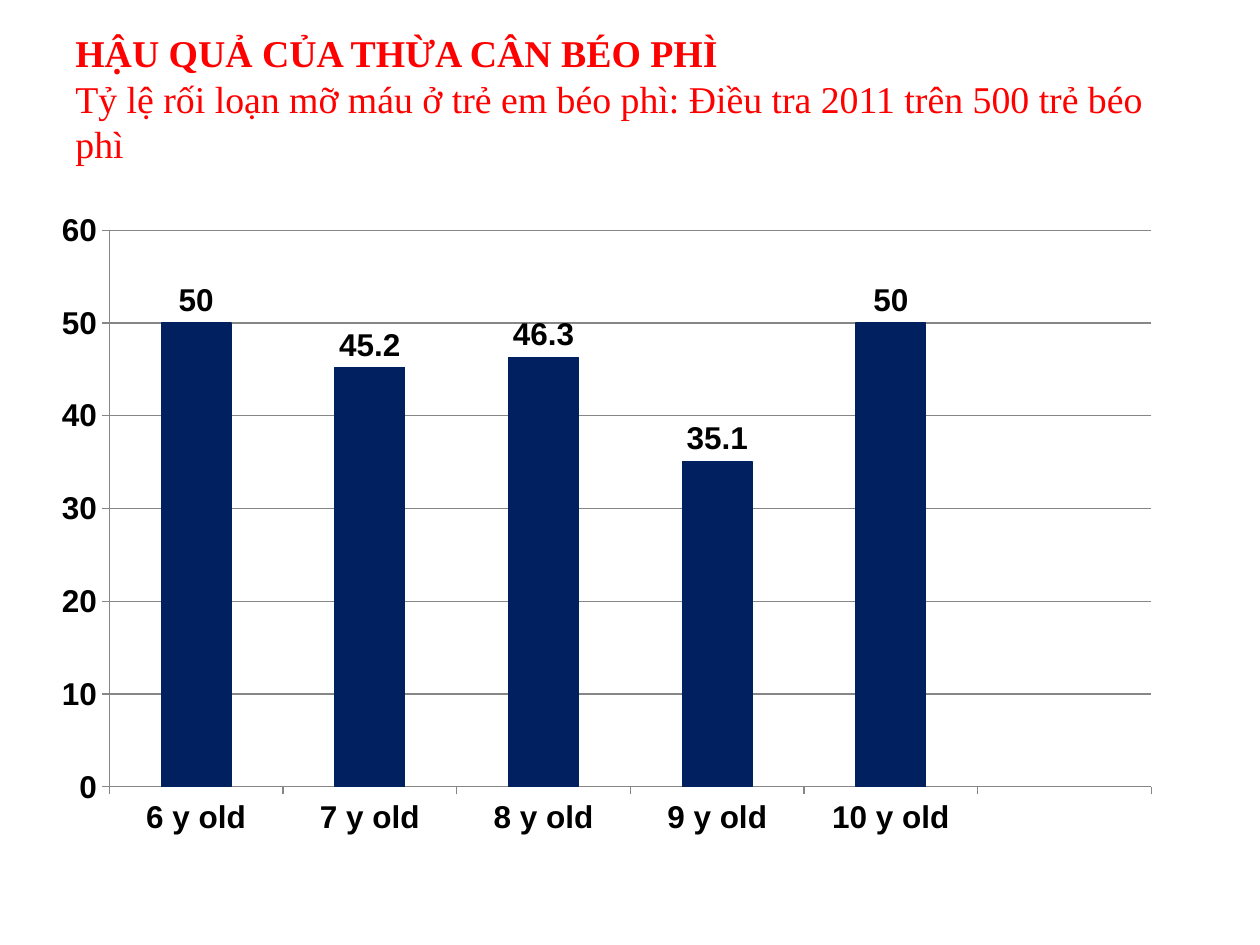
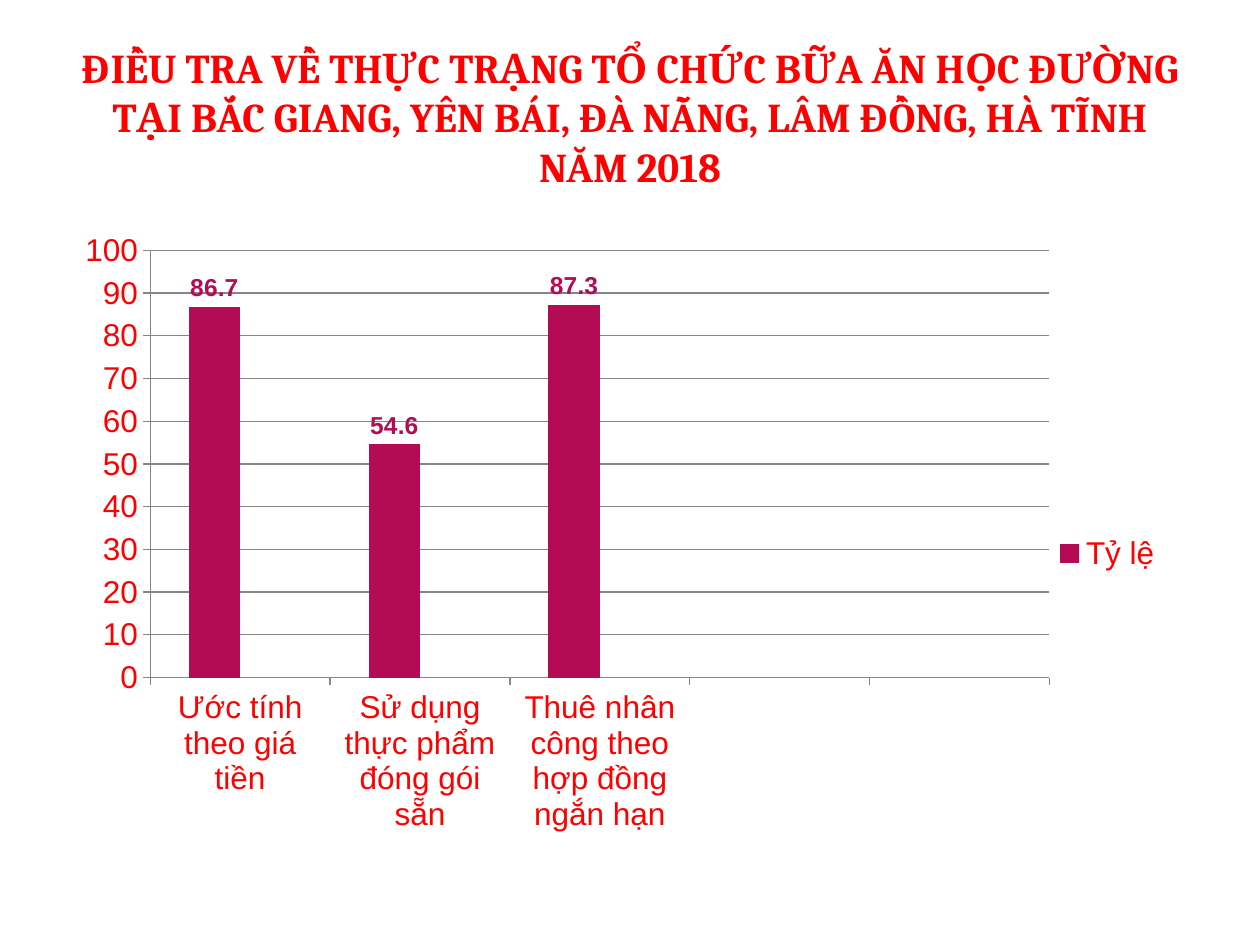
import pptx
import pptx.chart.data
import pptx.dml.color
import pptx.enum.chart
import pptx.enum.text
import pptx.util
import lxml.etree
from pptx.oxml.ns import qn

COLS, ROWS, CELL = 100, 75, 0.1
RED, BLACK, GREY, NAVY, PINK = "FF0000", "000000", "868686", "002060", "B40C54"
MID = pptx.enum.text.MSO_ANCHOR.MIDDLE
ALIGN = pptx.enum.text.PP_ALIGN
KIND = pptx.enum.chart.XL_CHART_TYPE.COLUMN_CLUSTERED


def tint(code):
    """Turn a hex string into a colour."""
    return pptx.dml.color.RGBColor.from_string(code)


def cells(count):
    """Turn a count of grid cells into a length."""
    return pptx.util.Inches(count * CELL)


def style(font, size, color, bold=False, name="Arial"):
    """Set the look of a font."""
    font.name, font.size, font.bold = name, pptx.util.Pt(size), bold
    font.color.rgb = tint(color)


def title(slide, box, runs, size, name, align, base=0.5):
    """Write a red title, one line of text for each run."""
    text = slide.shapes.add_textbox(*map(cells, box)).text_frame
    text.word_wrap, text.vertical_anchor = True, MID
    text.margin_bottom = cells(base)
    para = text.paragraphs[0]
    para.alignment = align
    for spot, (words, bold) in enumerate(runs):
        if spot:
            para.add_line_break()
        run = para.add_run()
        run.text = words
        style(run.font, size, RED, bold, name)


def layout(parent, spot, parts, inner=False):
    """Fix a chart part at percents of the chart's size."""
    for old in parent.findall(qn("c:layout")):
        parent.remove(old)
    outer = lxml.etree.Element(qn("c:layout"))
    manual = lxml.etree.SubElement(outer, qn("c:manualLayout"))
    pairs = [("layoutTarget", "inner")] if inner else []
    pairs += [("xMode", "edge"), ("yMode", "edge")]
    pairs += [(side, str(part / 100)) for side, part in zip("xywh", parts)]
    for tag, value in pairs:
        lxml.etree.SubElement(manual, qn("c:" + tag)).set("val", value)
    parent.insert(spot, outer)


def axes(chart, top, color, bold):
    """Style both axes and the grid."""
    for axis in (chart.category_axis, chart.value_axis):
        style(axis.tick_labels.font, 18, color, bold)
        axis.major_tick_mark = pptx.enum.chart.XL_TICK_MARK.OUTSIDE
        axis.format.line.color.rgb = tint(GREY)
    scale = chart.value_axis
    scale.minimum_scale, scale.maximum_scale, scale.major_unit = 0, top, 10
    scale.has_major_gridlines = True
    scale.major_gridlines.format.line.color.rgb = tint(GREY)


def prune(plot):
    """Drop unnamed category points, and the data of series without values."""
    for row in plot.series:
        node = row._element
        empty = not len(row.values)
        for tag in ("c:cat", "c:val"):
            part = node.find(qn(tag))
            if empty and part is not None:
                node.remove(part)
        for point in list(node.iterfind(".//" + qn("c:cat") + "//" + qn("c:pt"))):
            if not point.findtext(qn("c:v")):
                point.getparent().remove(point)


def bars(slide, box, cats, rows, top, ink, bold, size, area):
    """Draw a column chart; each row has a name, values, fill and label colour."""
    data = pptx.chart.data.CategoryChartData()
    data.categories = cats
    for name, values, *_ in rows:
        data.add_series(name, values)
    chart = slide.shapes.add_chart(KIND, *map(cells, box), data).chart
    style(chart.font, 18, BLACK)
    chart.has_title = chart.has_legend = False
    axes(chart, top, ink, bold)
    plot = chart.plots[0]
    plot.gap_width, plot.overlap, plot.vary_by_categories = 150, 0, False
    for row, (_, values, fill, mark) in zip(plot.series, rows):
        row.format.fill.solid()
        row.format.fill.fore_color.rgb = tint(fill)
        if values:
            tags = row.data_labels
            tags.show_value = True
            tags.position = pptx.enum.chart.XL_LABEL_POSITION.OUTSIDE_END
            style(tags.font, size, mark, True)
    prune(plot)
    layout(chart._chartSpace.chart.plotArea, 0, area, True)
    return chart


def legend(chart, parts):
    """Show a legend on the right without the second series."""
    chart.has_legend = True
    key = chart.legend
    key.position = pptx.enum.chart.XL_LEGEND_POSITION.RIGHT
    key.include_in_layout = False
    style(key.font, 18, RED)
    node = key._element
    entry = lxml.etree.Element(qn("c:legendEntry"))
    for tag in ("idx", "delete"):
        lxml.etree.SubElement(entry, qn("c:" + tag)).set("val", "1")
    node.insert(1, entry)
    layout(node, 2, parts)


def fats(slide):
    """Build the slide on blood fats by age."""
    runs = [
        ("HẬU QUẢ CỦA THỪA CÂN BÉO PHÌ", True),
        ("Tỷ lệ rối loạn mỡ máu ở trẻ em béo phì: Điều tra 2011 trên 500 trẻ béo phì", False),
    ]
    title(slide, (5, 3, 90, 13.6), runs, 21.6, "Times New Roman", ALIGN.LEFT, 4.5)
    cats = [f"{age} y old" for age in range(6, 11)] + [""]
    rows = [("Series 1", (50, 45.2, 46.3, 35.1, 50, None), NAVY, BLACK)]
    chart = bars(slide, (3.1, 15.8, 90, 51.5), cats, rows, 60, BLACK, True, 18,
                 (6.2, 4.8, 91.9, 85.8))
    edge = chart.plots[0].series[0].format.line
    edge.color.rgb, edge.width = tint(NAVY), pptx.util.Pt(0.75)


def meals(slide):
    """Build the slide on school meals."""
    words = ("ĐIỀU TRA VỀ THỰC TRẠNG TỔ CHỨC BỮA ĂN HỌC ĐƯỜNG TẠI BẮC GIANG, "
             "YÊN BÁI, ĐÀ NẴNG, LÂM ĐỒNG, HÀ TĨNH NĂM 2018")
    title(slide, (5, 3, 90, 12.5), [(words, True)], 23.4, "Cambria", ALIGN.CENTER)
    cats = ["Ước tính theo giá tiền", "Sử dụng thực phẩm đóng gói sẵn",
            "Thuê nhân công theo hợp đồng ngắn hạn", "", ""]
    rows = [("Tỷ lệ", (86.7, 54.6, 87.3, None, None), PINK, PINK),
            ("Series 2", [None] * 5, "000066", "000066"),
            ("Column1", [], "9BBB59", BLACK)]
    chart = bars(slide, (5, 17.5, 90, 49.5), cats, rows, 100, RED, False, 14,
                 (7.7, 4.8, 79.3, 68.5))
    legend(chart, (86.6, 49.9, 11, 7))


def main():
    """Build and save the slides."""
    deck = pptx.Presentation()
    deck.slide_width, deck.slide_height = cells(COLS), cells(ROWS)
    for build in (fats, meals):
        build(deck.slides.add_slide(deck.slide_layouts[6]))
    deck.save("out.pptx")


if __name__ == "__main__":
    main()
